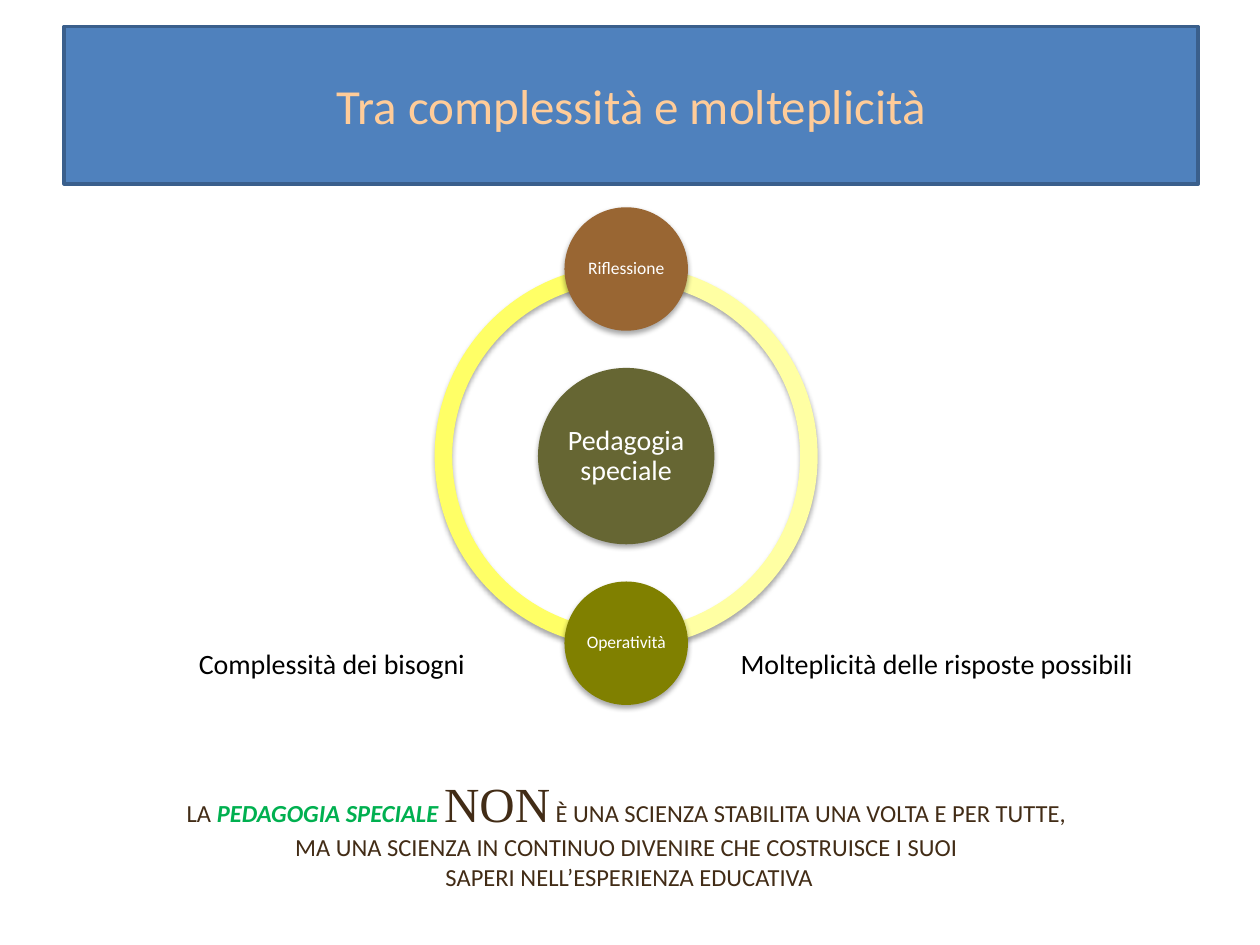
import pptx
import pptx.dml.color
import pptx.enum.shapes
import pptx.enum.text
import pptx.oxml
import pptx.oxml.ns
import pptx.util

SHAPE = pptx.enum.shapes.MSO_SHAPE
CENTER = pptx.enum.text.PP_ALIGN.CENTER
MIDDLE = pptx.enum.text.MSO_ANCHOR.MIDDLE
SHADOW = (
    f'<a:outerShdw {pptx.oxml.ns.nsdecls("a")} blurRad="40000" dist="23000" '
    'dir="5400000" rotWithShape="0"><a:srgbClr val="000000">'
    '<a:alpha val="35000"/></a:srgbClr></a:outerShdw>'
)


def rgb(value):
    return pptx.dml.color.RGBColor.from_string(value)


class Deck:
    """Style and current slide, measured on a grid of 100 columns by 75 rows."""

    body = {"name": "Calibri", "size": 16, "color": "000000"}
    cols, rows = 100, 75

    def __init__(self):
        self.prs = pptx.Presentation()
        self.prs.slide_width = pptx.util.Inches(10)
        self.prs.slide_height = pptx.util.Inches(7.5)
        self.s = self.prs.slides.add_slide(self.prs.slide_layouts[5])
        self.group = self.s.shapes.add_group_shape()

    def box(self, x, y, w, h):
        dx = self.prs.slide_width / self.cols
        dy = self.prs.slide_height / self.rows
        return [round(v) for v in (x * dx, y * dy, w * dx, h * dy)]

    def fill_text(self, tf, paragraphs, align=None, spacing=None):
        for i, runs in enumerate(paragraphs):
            p = tf.add_paragraph() if i else tf.paragraphs[0]
            p.alignment, p.line_spacing = align, spacing
            for text, changes in runs:
                r = p.add_run()
                r.text = text
                for key, value in {**self.body, **changes}.items():
                    if key == "color":
                        r.font.color.rgb = rgb(value)
                    elif key == "size":
                        r.font.size = pptx.util.Pt(value)
                    else:
                        setattr(r.font, key, value)

    def title(self, text, box, fill, line, **font):
        sp = self.s.shapes.title
        sp.left, sp.top, sp.width, sp.height = self.box(*box)
        sp.fill.solid()
        sp.fill.fore_color.rgb = rgb(fill)
        sp.line.color.rgb = rgb(line)
        sp.line.width = pptx.util.Pt(2)
        sp.text_frame.vertical_anchor = MIDDLE
        self.fill_text(sp.text_frame, [[(text, font)]], CENTER)

    def round_shape(self, kind, center, size, fill):
        x, y = (c - size / 2 for c in center)
        sp = self.group.shapes.add_shape(kind, *self.box(x, y, size, size))
        sp.fill.solid()
        sp.fill.fore_color.rgb = rgb(fill)
        sp.line.fill.background()
        sp.shadow.inherit = False
        effects = sp._element.spPr.find(pptx.oxml.ns.qn("a:effectLst"))
        effects.append(pptx.oxml.parse_xml(SHADOW))
        return sp

    def arc(self, center, size, fill, start, end):
        sp = self.round_shape(SHAPE.BLOCK_ARC, center, size, fill)
        for i, value in enumerate((start, end, 0.046)):
            sp.adjustments[i] = value

    def circle(self, text, center, size, fill, font_size):
        tf = self.round_shape(SHAPE.OVAL, center, size, fill).text_frame
        tf.word_wrap, tf.vertical_anchor = True, MIDDLE
        for side in ("left", "top", "right", "bottom"):
            setattr(tf, f"margin_{side}", pptx.util.Inches(0.01))
        font = {"size": font_size, "color": "FFFFFF"}
        self.fill_text(tf, [[(text, font)]], CENTER, 0.9)

    def text(self, paragraphs, box, align=None, wrap=False):
        tf = self.s.shapes.add_textbox(*self.box(*box)).text_frame
        tf.word_wrap = wrap
        tf.auto_size = pptx.enum.text.MSO_AUTO_SIZE.SHAPE_TO_FIT_TEXT
        self.fill_text(tf, paragraphs, align)


def main():
    deck = Deck()
    deck.title("Tra complessità e molteplicità", (5.1, 2.1, 90, 12.5),
               "4F81BD", "3A5F8C", size=28, color="FFCC99")

    x, y, orbit = 49.7, 36.2, 14.85
    deck.arc((x, y), 30.4, "FFFF66", 54, 162)
    deck.arc((x, y), 30.4, "FFFFA3", 162, 54)
    deck.circle("Pedagogia speciale", (x, y), 14, "666633", 16)
    deck.circle("Riflessione", (x, y - orbit), 9.8, "996633", 10)
    deck.circle("Operatività", (x, y + orbit), 9.8, "808000", 10)

    for label, left, width in (
        ("Complessità dei bisogni", 14.8, 25.7),
        ("Molteplicità delle risposte possibili", 57.8, 35.6),
    ):
        deck.text([[(label, {})]], (left, 50.8, width, 3.7))

    brown = {"size": 14, "color": "422C16"}
    green = {"size": 14, "color": "00B050", "bold": True, "italic": True}
    serif = {"size": 28, "color": "422C16", "name": "Times New Roman"}
    deck.text([
        [("LA ", brown), ("PEDAGOGIA SPECIALE ", green), ("NON", serif),
         (" È UNA SCIENZA STABILITA UNA VOLTA E PER TUTTE, ", brown)],
        [("MA UNA SCIENZA IN CONTINUO DIVENIRE CHE COSTRUISCE I SUOI ", brown)],
        [("SAPERI NELL’ESPERIENZA EDUCATIVA", brown)],
    ], (2.3, 60.9, 95.3, 10.4), CENTER, wrap=True)

    deck.prs.save("out.pptx")


if __name__ == "__main__":
    main()
